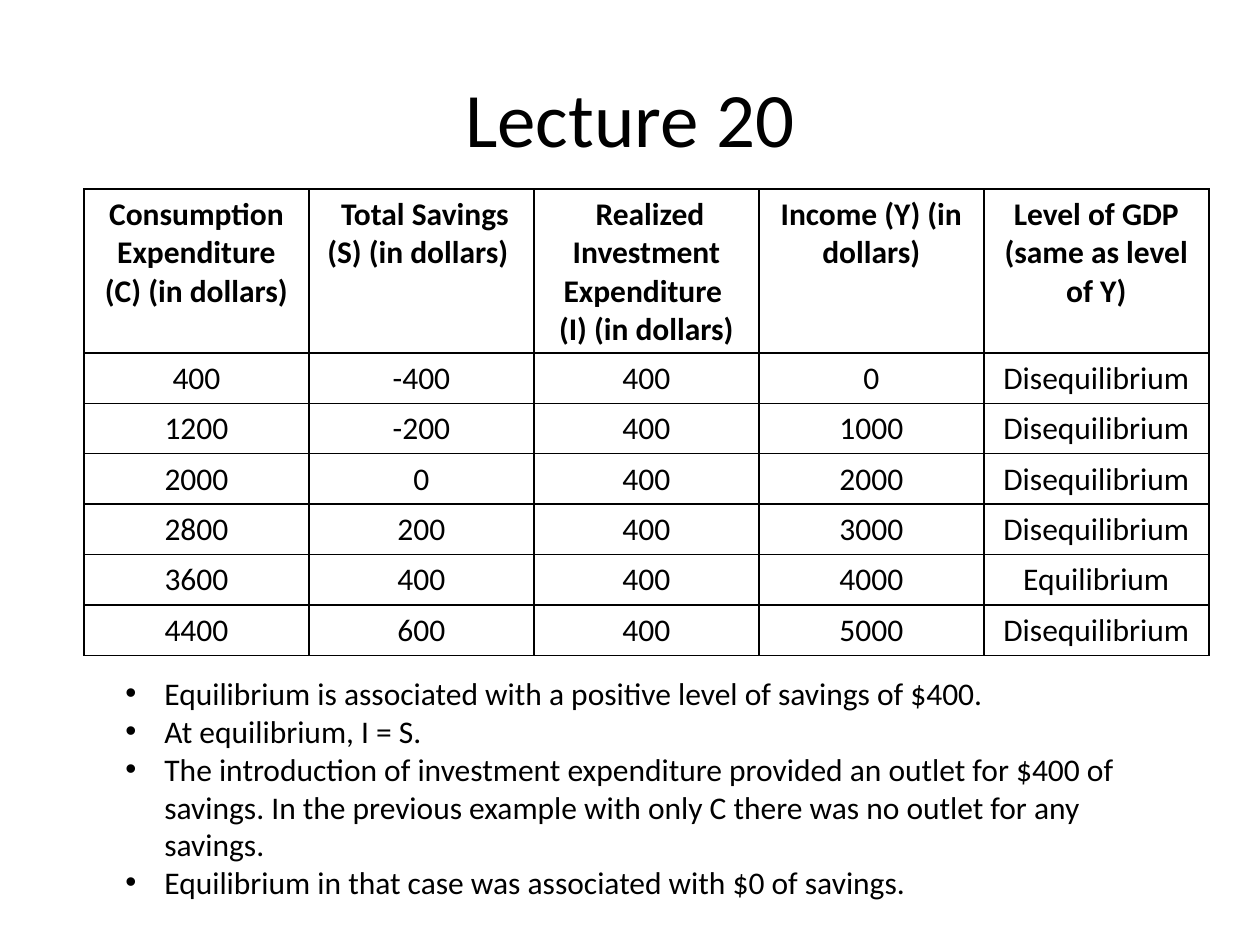
from lxml import etree
from pptx import Presentation
from pptx.dml.color import RGBColor
from pptx.enum.text import MSO_ANCHOR, PP_ALIGN
from pptx.oxml.ns import qn
from pptx.util import Pt

CENTER, LEFT = PP_ALIGN.CENTER, PP_ALIGN.LEFT
MIDDLE, TOP = MSO_ANCHOR.MIDDLE, MSO_ANCHOR.TOP
EMU_PER_PX = 914400 / 126
BORDER_SIDES = ("a:lnL", "a:lnR", "a:lnT", "a:lnB")

HEADERS = [
    "Consumption Expenditure (C) (in dollars)",
    " Total Savings (S) (in dollars) ",
    " Realized Investment Expenditure \n(I) (in dollars)",
    "Income (Y) (in dollars)",
    "Level of GDP (same as level of Y)",
]
LEVELS = [
    ("400", "-400", "400", "0", "Disequilibrium"),
    ("1200", "-200", "400", "1000", "Disequilibrium"),
    ("2000", "0", "400", "2000", "Disequilibrium"),
    ("2800", "200", "400", "3000", "Disequilibrium"),
    ("3600", "400", "400", "4000", "Equilibrium"),
    ("4400", "600", "400", "5000", "Disequilibrium"),
]
CONCLUSIONS = [
    "Equilibrium is associated with a positive level of savings of $400.",
    "At equilibrium, I = S.",
    "The introduction of investment expenditure provided an outlet for $400 of savings. "
    "In the previous example with only C there was no outlet for any savings.",
    "Equilibrium in that case was associated with $0 of savings.",
]


def px(length):
    return round(length * EMU_PER_PX)


def color(hex_value):
    return RGBColor.from_string(hex_value)


def add_bullet(paragraph, indent):
    properties = paragraph._p.get_or_add_pPr()
    properties.set("marL", str(px(indent)))
    properties.set("indent", str(-px(indent)))
    etree.SubElement(properties, qn("a:buFont"), typeface="Arial")
    etree.SubElement(properties, qn("a:buChar"), char="•")


def write(frame, text, *, size, font, ink, bold=False, align=LEFT, bullet_indent=0):
    """Fill a text frame, one paragraph for each line of text."""
    for index, line in enumerate(text.split("\n")):
        paragraph = frame.paragraphs[0] if index == 0 else frame.add_paragraph()
        if bullet_indent:
            add_bullet(paragraph, bullet_indent)
        paragraph.alignment = align
        run = paragraph.add_run()
        run.text = line
        run.font.size = Pt(size)
        run.font.name = font
        run.font.bold = bold
        run.font.color.rgb = color(ink)


def add_borders(cell, ink, width):
    """Draw the four sides; they must come before the fill in the cell's XML."""
    properties = cell._tc.get_or_add_tcPr()
    for position, side in enumerate(BORDER_SIDES):
        line = etree.Element(qn(side), w=str(Pt(width)))
        fill = etree.SubElement(line, qn("a:solidFill"))
        etree.SubElement(fill, qn("a:srgbClr"), val=ink)
        properties.insert(position, line)


class LectureSlide:
    font = "Calibri"
    ink = "000000"
    paper = "FFFFFF"
    body_size = 18

    def __init__(self, presentation):
        self.slide = presentation.slides.add_slide(presentation.slide_layouts[6])
        background = self.slide.background.fill
        background.solid()
        background.fore_color.rgb = color(self.paper)

    def text(self, text, left, top, width, height, *, size=body_size, anchor=TOP, **style):
        box = self.slide.shapes.add_textbox(px(left), px(top), px(width), px(height))
        frame = box.text_frame
        frame.word_wrap = True
        frame.vertical_anchor = anchor
        write(frame, text, size=size, font=self.font, ink=self.ink, **style)

    def table(self, rows, left, top, column_width, header_height, row_height):
        heights = [header_height] + [row_height] * (len(rows) - 1)
        table = self.slide.shapes.add_table(
            len(rows), len(rows[0]), px(left), px(top),
            px(column_width * len(rows[0])), px(sum(heights))).table
        table.horz_banding = False
        for column in table.columns:
            column.width = px(column_width)
        for row_index, (values, height) in enumerate(zip(rows, heights)):
            table.rows[row_index].height = px(height)
            for column_index, value in enumerate(values):
                cell = table.cell(row_index, column_index)
                cell.fill.background()
                add_borders(cell, self.ink, 1)
                write(cell.text_frame, value, size=self.body_size, font=self.font,
                      ink=self.ink, bold=row_index == 0, align=CENTER)


def main():
    presentation = Presentation()
    presentation.slide_width, presentation.slide_height = px(1260), px(945)
    lecture = LectureSlide(presentation)
    lecture.text("Lecture 20", 63, 38, 1134, 158, size=44, anchor=MIDDLE, align=CENTER)
    lecture.table([HEADERS, *LEVELS], left=84, top=189, column_width=225,
                  header_height=159, row_height=49)
    lecture.text("\n".join(CONCLUSIONS), 113, 668, 1042, 242, bullet_indent=39)
    presentation.save("out.pptx")


if __name__ == "__main__":
    main()
